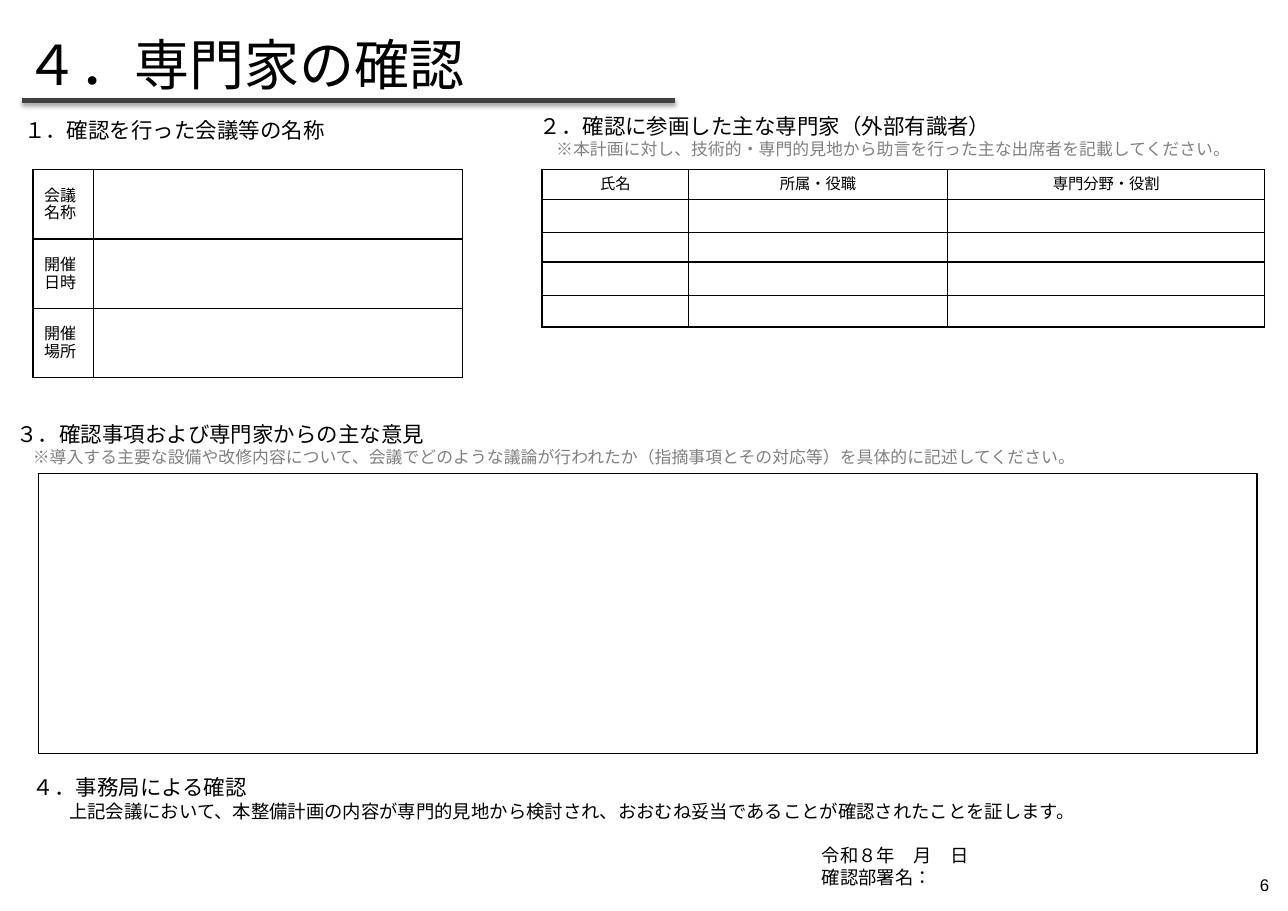
from dataclasses import dataclass

from lxml import etree
from pptx import Presentation
from pptx import util as u
from pptx.dml.color import RGBColor
from pptx.enum import lang, shapes, text
from pptx.oxml import ns

PX = 9144
FONT = "Arial"
BLACK = "000000"
GRAY = "808080"
DARK = "404040"


@dataclass
class Line:
    content: str
    size: float
    color: str = BLACK
    indent: int = 0
    before: float = 0


@dataclass
class TextBlock:
    box: tuple[int, int, int, int]
    lines: list[Line]


@dataclass
class Grid:
    left: int
    top: int
    columns: list[int]
    rows: list[int]
    labels: dict[tuple[int, int], str]
    size: float
    align: text.PP_ALIGN


def px(value: int) -> u.Emu:
    return u.Emu(value * PX)


def rgb(value: str) -> RGBColor:
    return RGBColor.from_string(value)


def child(parent, tag: str, **attributes: str):
    return etree.SubElement(parent, ns.qn(tag), attributes)


def style_runs(paragraph, size: float, color: str) -> None:
    for run in paragraph.runs:
        run.font.size = u.Pt(size)
        run.font.name = FONT
        run.font.color.rgb = rgb(color)
        run.font.language_id = lang.MSO_LANGUAGE_ID.JAPANESE
        child(run.font._element, "a:ea", typeface=FONT)


def draw_text(slide, block: TextBlock):
    shape = slide.shapes.add_textbox(*map(px, block.box))
    frame = shape.text_frame
    frame.word_wrap = True
    for index, line in enumerate(block.lines):
        paragraph = frame.add_paragraph() if index else frame.paragraphs[0]
        paragraph.text = line.content
        if line.before:
            paragraph.space_before = u.Pt(line.before)
        if line.indent:
            paragraph._p.get_or_add_pPr().set("marL", str(px(line.indent)))
        style_runs(paragraph, line.size, line.color)
    return shape


def draw_borders(cell) -> None:
    properties = cell._tc.get_or_add_tcPr()
    for side in ("a:lnL", "a:lnR", "a:lnT", "a:lnB"):
        border = child(properties, side, w=str(u.Pt(1)))
        child(child(border, "a:solidFill"), "a:srgbClr", val=BLACK)


def draw_grid(slide, grid: Grid) -> None:
    table = slide.shapes.add_table(
        len(grid.rows), len(grid.columns), px(grid.left), px(grid.top),
        px(sum(grid.columns)), px(sum(grid.rows))).table
    table.first_row = table.horz_banding = False
    for column, width in zip(table.columns, grid.columns):
        column.width = px(width)
    for row, height in zip(table.rows, grid.rows):
        row.height = px(height)
    for row in range(len(grid.rows)):
        for column in range(len(grid.columns)):
            cell = table.cell(row, column)
            draw_borders(cell)
            cell.fill.background()
            cell.vertical_anchor = text.MSO_ANCHOR.MIDDLE
            paragraph = cell.text_frame.paragraphs[0]
            if (row, column) in grid.labels:
                paragraph.text = grid.labels[row, column]
                paragraph.alignment = grid.align
                style_runs(paragraph, grid.size, BLACK)
            else:
                child(paragraph._p, "a:endParaRPr", sz=str(int(grid.size * 100)))


def draw_title_rule(slide) -> None:
    rule = slide.shapes.add_connector(
        shapes.MSO_CONNECTOR.STRAIGHT, px(20), px(91), px(613), px(91))
    rule.line.color.rgb = rgb(DARK)
    rule.line.width = u.Pt(3.5)
    effects = child(rule._element.spPr, "a:effectLst")
    shadow = child(effects, "a:outerShdw", blurRad=str(u.Pt(3.1)),
                   dist=str(u.Pt(1.6)), dir="5400000", rotWithShape="0")
    child(child(shadow, "a:srgbClr", val=BLACK), "a:alpha", val="38000")


def draw_opinion_box(slide) -> None:
    shape = slide.shapes.add_shape(
        shapes.MSO_SHAPE.RECTANGLE, px(35), px(430), px(1106), px(254))
    shape.shadow.inherit = False
    shape.fill.background()
    shape.line.color.rgb = rgb(BLACK)
    shape.line.width = u.Pt(0.75)


def draw_page_number(slide) -> None:
    shape = draw_text(slide, TextBlock((1128, 788, 24, 24), [Line("6", 11)]))
    frame = shape.text_frame
    frame.margin_left = frame.margin_right = 0
    frame.margin_top = frame.margin_bottom = 0
    frame.vertical_anchor = text.MSO_ANCHOR.BOTTOM
    frame.paragraphs[0].alignment = text.PP_ALIGN.RIGHT


TEXTS = [
    TextBlock((12, 23, 1082, 71), [Line("４．専門家の確認", 36)]),
    TextBlock((12, 101, 1112, 57), [Line("１．確認を行った会議等の名称", 14)]),
    TextBlock((480, 98, 668, 54), [
        Line("２．確認に参画した主な専門家（外部有識者）", 14),
        Line("※本計画に対し、技術的・専門的見地から助言を行った主な出席者を記載してください。",
             11, GRAY, 15)]),
    TextBlock((5, 377, 1112, 52), [
        Line("３．確認事項および専門家からの主な意見", 14),
        Line("※導入する主要な設備や改修内容について、会議でどのような議論が行われたか"
             "（指摘事項とその対応等）を具体的に記述してください。", 11, GRAY, 15)]),
    TextBlock((20, 698, 1082, 114), [
        Line("４．事務局による確認", 14),
        Line("上記会議において、本整備計画の内容が専門的見地から検討され、"
             "おおむね妥当であることが確認されたことを証します。", 12, indent=33),
        Line("令和８年　月　日", 12, indent=716, before=14.4),
        Line("確認部署名：", 12, indent=716)]),
]

GRIDS = [
    Grid(30, 154, [55, 335], [63] * 3,
         {(0, 0): "会議名称", (1, 0): "開催日時", (2, 0): "開催場所"},
         10.5, text.PP_ALIGN.LEFT),
    Grid(492, 154, [133, 235, 288], [27, 30, 27, 30, 29],
         {(0, 0): "氏名", (0, 1): "所属・役職", (0, 2): "専門分野・役割"},
         10, text.PP_ALIGN.CENTER),
]


def main() -> None:
    presentation = Presentation()
    presentation.slide_width = px(1169)
    presentation.slide_height = px(827)
    slide = presentation.slides.add_slide(presentation.slide_layouts[6])
    draw_title_rule(slide)
    for block in TEXTS:
        draw_text(slide, block)
    for grid in GRIDS:
        draw_grid(slide, grid)
    draw_opinion_box(slide)
    draw_page_number(slide)
    presentation.save("out.pptx")


if __name__ == "__main__":
    main()
